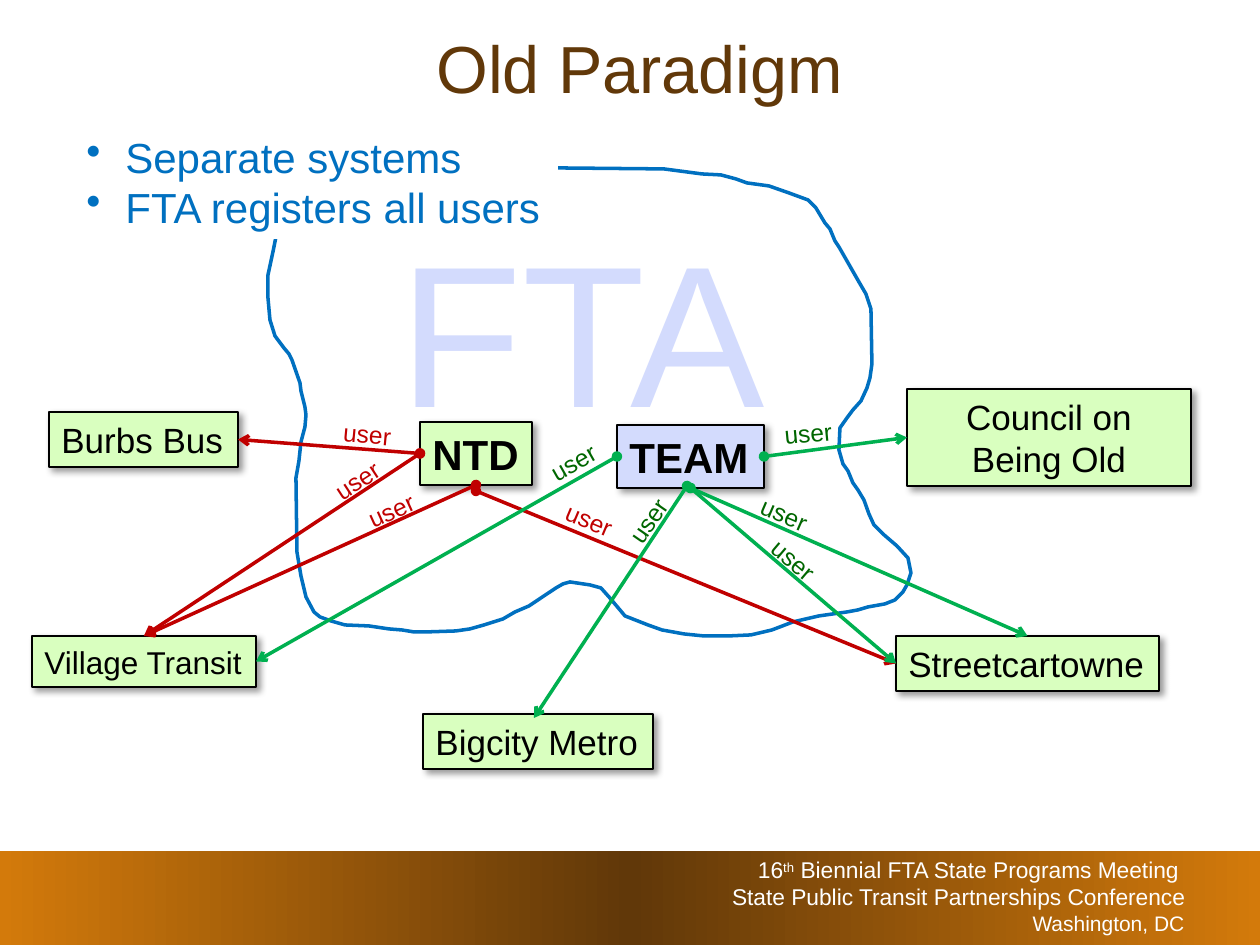
from dataclasses import dataclass

from lxml.etree import SubElement
from pptx import Presentation
from pptx.dml.color import RGBColor
from pptx.enum.shapes import MSO_CONNECTOR, MSO_SHAPE
from pptx.enum.text import MSO_ANCHOR, MSO_AUTO_SIZE, PP_ALIGN
from pptx.oxml.ns import qn
from pptx.util import Pt

PX = 7257.14  # EMU per px, 126 px to the inch


@dataclass(frozen=True)
class Theme:
    font: str = "Arial"
    brown: str = "613809"
    orange: str = "D37A0B"
    blue: str = "0070C0"
    green_box: str = "D9FFBF"
    blue_box: str = "D3DBFD"
    red: str = "C00000"
    green: str = "00B050"
    dark_green: str = "006600"
    black: str = "000000"
    white: str = "FFFFFF"
    title: int = 38
    body: int = 24
    agency: int = 115
    label: int = 14
    footer: int = 13
    city: int = 12


T = Theme()
TITLE = "Old Paradigm"
BULLETS = ["Separate systems", "FTA registers all users"]

# name: (left, top, width, height), fill, type size, bold
SYSTEMS_AND_AGENCIES = {
    "TEAM": ((617, 425, 147, 63), T.blue_box, 24, True),
    "NTD": ((420, 422, 112, 63), T.green_box, 24, True),
    "Council on Being Old": ((907, 389, 284, 97), T.green_box, 20, False),
    "Village Transit": ((32, 636, 224, 51), T.green_box, 18, False),
    "Bigcity Metro": ((423, 714, 230, 55), T.green_box, 20, False),
    "Streetcartowne": ((896, 636, 263, 55), T.green_box, 20, False),
    "Burbs Bus": ((49, 412, 189, 55), T.green_box, 20, False),
}
TOP, LEFT, BOTTOM, RIGHT = range(4)
# each end is (box name, side) or a free point (x, y)
ACCESS_LINKS = [
    (("NTD", LEFT), ("Burbs Bus", RIGHT), T.red),
    (("NTD", LEFT), ("Village Transit", TOP), T.red),
    ((476, 491), ("Streetcartowne", LEFT), T.red),
    (("NTD", BOTTOM), ("Village Transit", TOP), T.red),
    (("TEAM", BOTTOM), ("Streetcartowne", TOP), T.green),
    ((687, 486), (534, 718), T.green),
    (("TEAM", LEFT), ("Village Transit", RIGHT), T.green),
    (("TEAM", RIGHT), ("Council on Being Old", LEFT), T.green),
    (("TEAM", BOTTOM), ("Streetcartowne", LEFT), T.green),
]
# left, top, rotation of each "user" label
USER_LABELS = {
    T.red: [(331, 413, 5.2), (553, 499, 23), (321, 459, 326.9), (355, 489, 335.6)],
    T.dark_green: [(612, 499, 304.7), (772, 412, 354.5), (537, 441, 330.3),
                   (748, 493, 23.3), (757, 539, 40.3)],
}
FTA_BOUNDARY = [
    (352, 159), (329, 165), (315, 170), (299, 184), (287, 202), (278, 224),
    (276, 237), (273, 252), (268, 275), (268, 298), (270, 320), (275, 336),
    (284, 348), (289, 354), (292, 360), (300, 383), (301, 391), (305, 407),
    (306, 415), (305, 427), (301, 442), (299, 461), (296, 478), (297, 552),
    (301, 576), (306, 597), (314, 612), (320, 617), (331, 621), (345, 625),
    (369, 626), (389, 629), (402, 630), (414, 632), (426, 632), (456, 631),
    (470, 629), (484, 625), (503, 619), (515, 612), (529, 606), (544, 596),
    (556, 588), (563, 584), (570, 582), (590, 585), (601, 588), (609, 597),
    (620, 610), (625, 616), (648, 625), (662, 630), (684, 634), (704, 636),
    (728, 636), (751, 635), (772, 630), (793, 622), (819, 616), (847, 612),
    (858, 610), (868, 607), (885, 604), (895, 600), (903, 592), (907, 585),
    (911, 573), (908, 558), (897, 546), (883, 534), (874, 525), (869, 514),
    (864, 500), (858, 490), (853, 483), (848, 471), (843, 464), (839, 450),
    (840, 428), (847, 418), (853, 410), (861, 401), (867, 388), (870, 378),
    (872, 364), (871, 309), (866, 294), (859, 282), (839, 247), (835, 241),
    (830, 229), (825, 223), (816, 208), (808, 200), (789, 193), (769, 186),
    (747, 183), (736, 179), (721, 175), (702, 174), (679, 171), (664, 169),
    (558, 168), (489, 161), (454, 158), (408, 149), (389, 147), (359, 154),
]


def emu(*lengths):
    return [round(length * PX) for length in lengths]


def rgb(color):
    return RGBColor.from_string(color)


def style(paragraph, size, color, bold=False, align=PP_ALIGN.LEFT):
    paragraph.alignment = align
    font = paragraph.font
    font.name, font.size, font.bold = T.font, Pt(size), bold
    font.color.rgb = rgb(color)


def add_text(slide, box, text, size, color, wrap=False):
    label = slide.shapes.add_textbox(*emu(*box))
    label.text_frame.word_wrap = wrap
    label.text_frame.text = text
    for paragraph in label.text_frame.paragraphs:
        style(paragraph, size, color)
    return label


def add_footer(slide):
    band = slide.shapes.add_shape(MSO_SHAPE.RECTANGLE, *emu(0, 851, 1260, 94))
    band.shadow.inherit = False
    band.line.fill.background()
    band.fill.gradient()
    band.fill.gradient_angle = 0
    stops = band._element.spPr.find(qn("a:gradFill")).find(qn("a:gsLst"))
    stops.clear()
    for position, color in [(0, T.orange), (50000, T.brown), (100000, T.orange)]:
        stop = SubElement(stops, qn("a:gs"), pos=str(position))
        SubElement(stop, qn("a:srgbClr"), val=color)

    frame = slide.shapes.add_textbox(*emu(315, 851, 882, 93)).text_frame
    frame.word_wrap = True
    meeting, conference = frame.paragraphs[0], frame.add_paragraph()
    for text in ["16", "th", " Biennial FTA State Programs Meeting "]:
        meeting.add_run().text = text
    meeting.runs[1]._r.get_or_add_rPr().set("baseline", "30000")
    conference.add_run().text = "State Public Transit Partnerships Conference"
    conference.add_line_break()
    city = conference.add_run()
    city.text = "Washington, DC"
    city.font.size = Pt(T.city)
    for paragraph in (meeting, conference):
        style(paragraph, T.footer, T.white, align=PP_ALIGN.RIGHT)
        paragraph.line_spacing = Pt(15)


def add_boundary(slide):
    start, *rest = [emu(*point) for point in FTA_BOUNDARY]
    builder = slide.shapes.build_freeform(*start)
    builder.add_line_segments(rest, close=True)
    boundary = builder.convert_to_shape()
    boundary.shadow.inherit = False
    boundary.fill.background()
    boundary.line.color.rgb = rgb(T.blue)
    boundary.line.width = Pt(2)


def add_box(slide, name, place, fill, size, bold):
    box = slide.shapes.add_shape(MSO_SHAPE.RECTANGLE, *emu(*place))
    box.fill.solid()
    box.fill.fore_color.rgb = rgb(fill)
    box.line.color.rgb = rgb(T.black)
    box.line.width = Pt(0.75)
    box.shadow.inherit = False
    shadow = SubElement(box._element.spPr.find(qn("a:effectLst")), qn("a:outerShdw"),
                        blurRad=str(Pt(4)), dist=str(Pt(3)), dir="2700000", algn="tl")
    tint = SubElement(shadow, qn("a:srgbClr"), val=T.black)
    SubElement(tint, qn("a:alpha"), val="40000")
    frame = box.text_frame
    frame.vertical_anchor = MSO_ANCHOR.MIDDLE
    frame.word_wrap = name.startswith("Council")
    frame.text = name
    style(frame.paragraphs[0], size, T.black, bold,
          PP_ALIGN.CENTER if frame.word_wrap else PP_ALIGN.LEFT)
    return box


def add_link(slide, boxes, begin, end, color):
    free = [(0, 0) if point[0] in boxes else point for point in (begin, end)]
    link = slide.shapes.add_connector(MSO_CONNECTOR.STRAIGHT, *emu(*free[0], *free[1]))
    for point, connect in [(begin, link.begin_connect), (end, link.end_connect)]:
        if point[0] in boxes:
            connect(boxes[point[0]], point[1])
    link.line.color.rgb = rgb(color)
    link.line.width = Pt(2)
    line = link.line._get_or_add_ln()
    SubElement(line, qn("a:headEnd"), type="oval")
    SubElement(line, qn("a:tailEnd"), type="arrow")
    SubElement(link._element.spPr, qn("a:effectLst"))


def add_bullets(slide):
    summary = add_text(slide, (74, 125, 484, 114), "\n".join(BULLETS), T.body, T.blue)
    summary.fill.solid()
    summary.fill.fore_color.rgb = rgb(T.white)
    indent = emu(39)[0]
    for paragraph in summary.text_frame.paragraphs:
        properties = paragraph._p.get_or_add_pPr()
        properties.set("marL", str(indent))
        properties.set("indent", str(-indent))
        bullet = properties.makeelement(qn("a:buChar"), {"char": "•"})
        properties.insert(0, bullet)


def main():
    deck = Presentation()
    deck.slide_width, deck.slide_height = emu(1260, 945)
    slide = deck.slides.add_slide(deck.slide_layouts[5])
    add_footer(slide)

    title = slide.shapes.title
    title.left, title.top, title.width, title.height = emu(73, 21, 1134, 92)
    title.text_frame.text = TITLE
    title.text_frame.auto_size = MSO_AUTO_SIZE.NONE
    title.text_frame.vertical_anchor = MSO_ANCHOR.MIDDLE
    style(title.text_frame.paragraphs[0], T.title, T.brown, align=PP_ALIGN.CENTER)

    add_boundary(slide)
    boxes = {name: add_box(slide, name, *look)
             for name, look in SYSTEMS_AND_AGENCIES.items()}
    add_text(slide, (387, 200, 394, 257), "FTA", T.agency, T.blue_box)
    for begin, end, color in ACCESS_LINKS:
        add_link(slide, boxes, begin, end, color)
    for color, places in USER_LABELS.items():
        for left, top, angle in places:
            add_text(slide, (left, top, 73, 43), "user", T.label, color).rotation = angle
    add_bullets(slide)
    deck.save("out.pptx")


if __name__ == "__main__":
    main()
